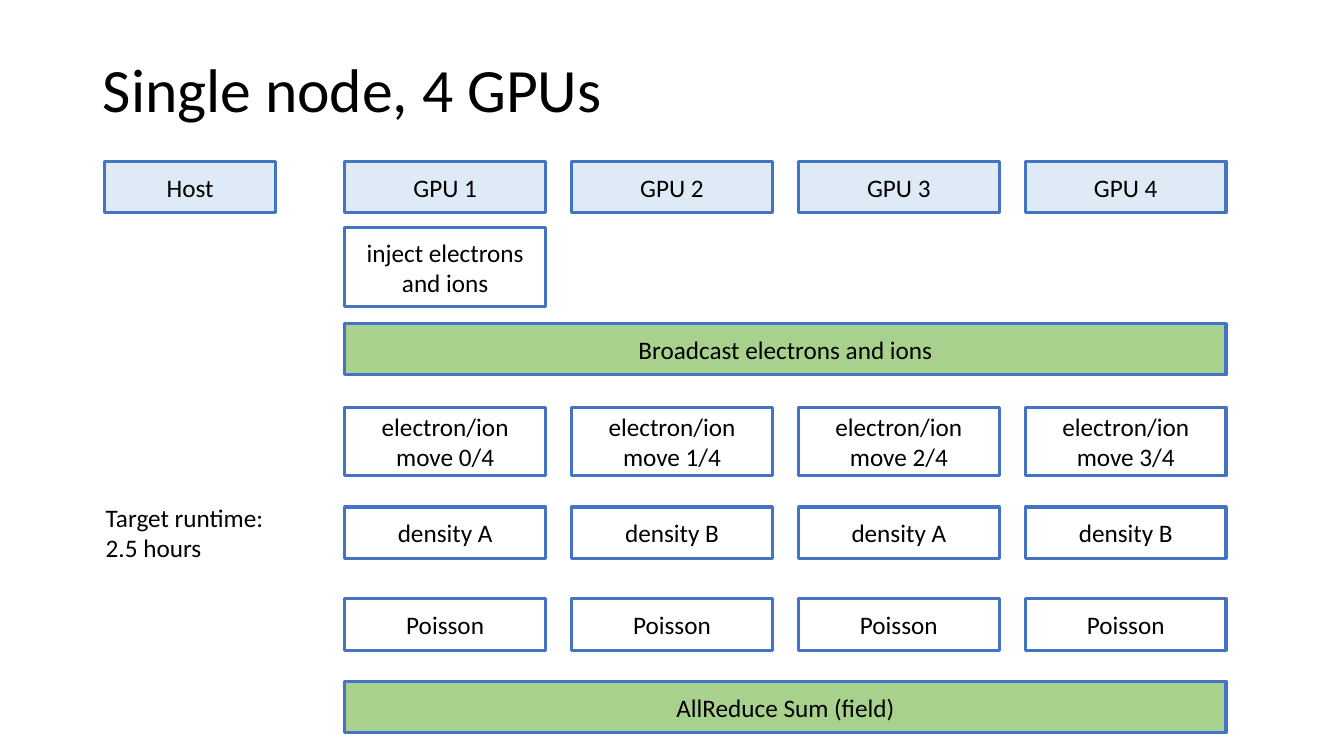
import pptx
import pptx.util
import pptx.dml.color
import pptx.enum.shapes
import pptx.enum.text

Inches = pptx.util.Inches
RGBColor = pptx.dml.color.RGBColor
ALIGN = pptx.enum.text.PP_ALIGN
ANCHOR = pptx.enum.text.MSO_ANCHOR

BLACK = RGBColor(0x00, 0x00, 0x00)
WHITE = RGBColor(0xFF, 0xFF, 0xFF)
BLUE = RGBColor(0x44, 0x72, 0xC4)
PALE = RGBColor(0xDE, 0xEB, 0xF7)
GREEN = RGBColor(0xA9, 0xD1, 0x8E)

LEFT, STEP, WIDTH = 3.42, 2.25, 1.99
SPAN = 3 * STEP + WIDTH
HIGH = 0.51

# Top, height, fill and the label of each GPU
ROWS = [
    (1.6, HIGH, PALE, [f"GPU {n}" for n in range(1, 5)]),
    (2.26, 0.78, WHITE, ["inject electrons and ions"]),
    (4.04, 0.68, WHITE, [f"electron/ion move {n}/4" for n in range(4)]),
    (5.03, HIGH, WHITE, ["density A", "density B"] * 2),
    (5.94, HIGH, WHITE, ["Poisson"] * 4),
]
BARS = [(3.21, "Broadcast electrons and ions"), (6.76, "AllReduce Sum (field)")]


def write(shape, text, size, align, anchor):
    frame = shape.text_frame
    frame.word_wrap = True
    frame.vertical_anchor = anchor
    para = frame.paragraphs[0]
    para.text = text
    para.alignment = align
    style = {"name": "Calibri", "size": pptx.util.Pt(size)}
    for key, value in style.items():
        setattr(para.font, key, value)
    para.font.color.rgb = BLACK
    return para


def add_title(slide, text):
    title = slide.shapes.title
    place = {"left": 0.92, "top": 0.4, "width": 11.5, "height": 1.04}
    for key, value in place.items():
        setattr(title, key, Inches(value))
    para = write(title, text, 44, ALIGN.LEFT, ANCHOR.MIDDLE)
    para.line_spacing = 0.9


def add_box(slide, text, left, top, width, height, fill):
    box = slide.shapes.add_shape(
        pptx.enum.shapes.MSO_SHAPE.RECTANGLE,
        Inches(left), Inches(top), Inches(width), Inches(height))
    box.shadow.inherit = False
    box.fill.solid()
    box.fill.fore_color.rgb = fill
    box.line.color.rgb = BLUE
    box.line.width = pptx.util.Pt(2.25)
    write(box, text, 18, ALIGN.CENTER, ANCHOR.MIDDLE)


def add_note(slide, text, left, top, width, height):
    note = slide.shapes.add_textbox(
        Inches(left), Inches(top), Inches(width), Inches(height))
    write(note, text, 18, ALIGN.LEFT, ANCHOR.TOP)
    note.text_frame.auto_size = pptx.enum.text.MSO_AUTO_SIZE.SHAPE_TO_FIT_TEXT


def main():
    deck = pptx.Presentation()
    deck.slide_width = Inches(13.33)
    deck.slide_height = Inches(7.5)
    slide = deck.slides.add_slide(deck.slide_layouts.get_by_name("Title Only"))

    add_title(slide, "Single node, 4 GPUs")
    add_box(slide, "Host", 1.04, 1.6, 1.69, HIGH, PALE)
    for top, height, fill, labels in ROWS:
        for col, label in enumerate(labels):
            add_box(slide, label, LEFT + col * STEP, top, WIDTH, height, fill)
    for top, label in BARS:
        add_box(slide, label, LEFT, top, SPAN, HIGH, GREEN)
    add_note(slide, "Target runtime: 2.5 hours", 0.95, 4.93, 1.88, 0.71)

    deck.save("out.pptx")


if __name__ == "__main__":
    main()
